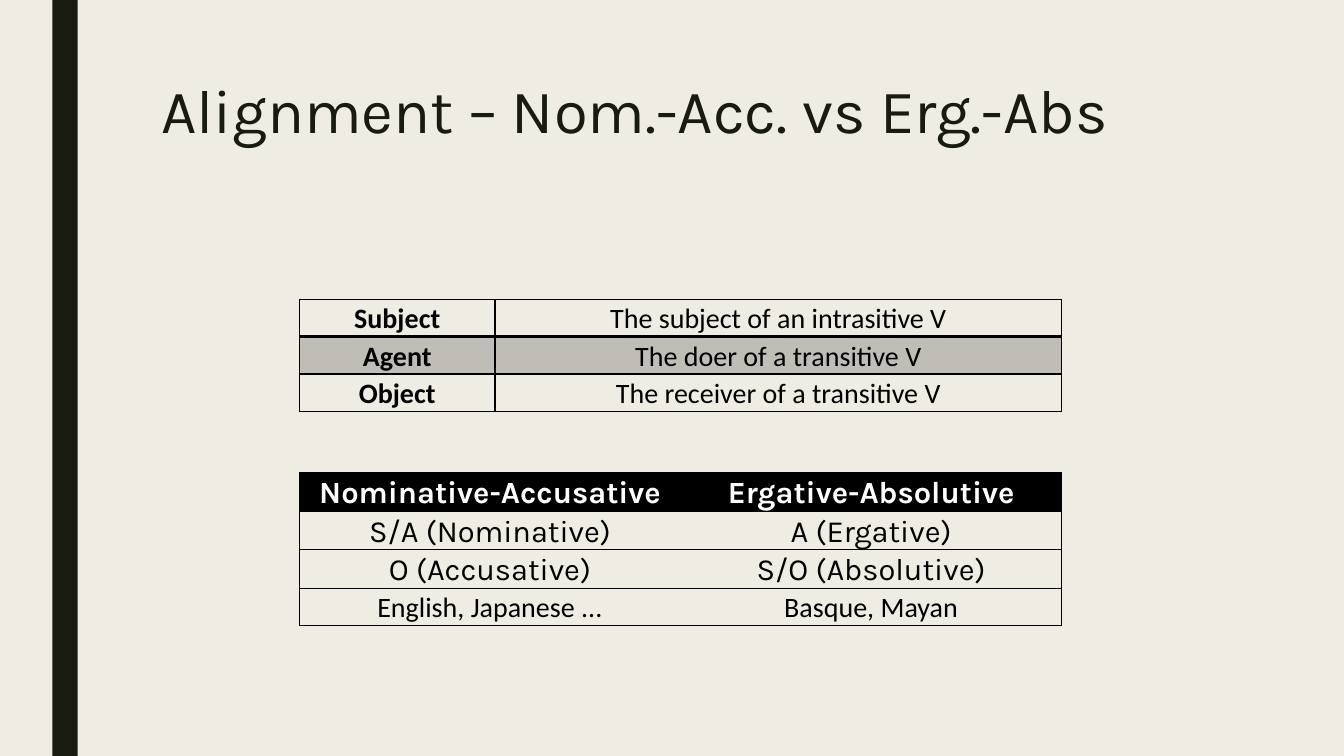
from lxml.etree import SubElement
from pptx import Presentation
from pptx.dml.color import RGBColor
from pptx.enum.shapes import MSO_SHAPE
from pptx.enum.text import MSO_ANCHOR, MSO_AUTO_SIZE, PP_ALIGN
from pptx.oxml.ns import qn
from pptx.util import Inches, Pt

PAPER = "EFEDE3"
INK = "191B0E"
BLACK = "000000"
WHITE = "FFFFFF"

ROLES = [
    ("Subject", "The subject of an intrasitive V"),
    ("Agent", "The doer of a transitive V"),
    ("Object", "The receiver of a transitive V"),
]
ALIGNMENTS = [
    ("Nominative-Accusative", "Ergative-Absolutive"),
    ("S/A (Nominative)", "A (Ergative)"),
    ("O (Accusative)", "S/O (Absolutive)"),
    ("English, Japanese ...", "Basque, Mayan"),
]


def paint(fill, color):
    fill.solid()
    fill.fore_color.rgb = RGBColor.from_string(color)


def style_text(paragraph, font_name, size, color, bold=False, spacing=1.07):
    paragraph.line_spacing = spacing
    for run in paragraph.runs:
        run.font.name = font_name
        run.font.size = Pt(size)
        run.font.bold = bold
        run.font.color.rgb = RGBColor.from_string(color)


def set_borders(cell, widths):
    """Draw left, right, top and bottom lines in points; 0 hides a line."""
    properties = cell._tc.get_or_add_tcPr()
    for side, width in zip("LRTB", widths):
        line = SubElement(properties, qn(f"a:ln{side}"), w=str(Pt(width)))
        if width:
            solid = SubElement(line, qn("a:solidFill"))
            SubElement(solid, qn("a:srgbClr"), val=BLACK)
        else:
            SubElement(line, qn("a:noFill"))


def fill_cell(cell, color, opacity=100):
    if color is None:
        cell.fill.background()
        return
    paint(cell.fill, color)
    if opacity < 100:
        tint = cell._tc.tcPr.find(f"{qn('a:solidFill')}/{qn('a:srgbClr')}")
        SubElement(tint, qn("a:alpha"), val=str(opacity * 1000))


def add_grid(slide, top, column_widths, rows):
    """Place an unstyled table with centred text."""
    row_height = Inches(0.37)
    table = slide.shapes.add_table(
        len(rows), len(column_widths), Inches(2.97), Inches(top),
        Inches(sum(column_widths)), row_height * len(rows)).table
    table.first_row = table.horz_banding = False
    for column, width in zip(table.columns, column_widths):
        column.width = Inches(width)
    for row, texts in zip(table.rows, rows):
        row.height = row_height
        for cell, text in zip(row.cells, texts):
            cell.text_frame.text = text
            cell.text_frame.paragraphs[0].alignment = PP_ALIGN.CENTER
            cell.vertical_anchor = MSO_ANCHOR.MIDDLE
            cell.margin_left = cell.margin_right = Inches(0.14)
            cell.margin_top = cell.margin_bottom = 0
    return table


def add_roles(slide):
    table = add_grid(slide, 2.97, (1.94, 5.62), ROLES)
    for r, row in enumerate(table.rows):
        top, bottom = 2 if r == 1 else 1, 2 if r == 0 else 1
        for c, cell in enumerate(row.cells):
            style_text(cell.text_frame.paragraphs[0], "Calibri", 20, BLACK, bold=c == 0)
            set_borders(cell, (1, 1, top, bottom))
            fill_cell(cell, BLACK if r == 1 else None, opacity=20)


def add_alignments(slide):
    table = add_grid(slide, 4.69, (3.78, 3.78), ALIGNMENTS)
    last = len(ALIGNMENTS) - 1
    for r, row in enumerate(table.rows):
        is_header = r == 0
        font_name, size = ("Calibri", 20) if r == last else ("Karla", 22)
        for c, cell in enumerate(row.cells):
            style_text(cell.text_frame.paragraphs[0], font_name, size,
                       WHITE if is_header else BLACK, bold=is_header)
            set_borders(cell, (0.5 if c == 0 else 0, 0.5 if c == 1 else 0, 0.5, 0.5))
            fill_cell(cell, BLACK if is_header else None)


def add_side_bar(slide, height):
    bar = slide.shapes.add_shape(
        MSO_SHAPE.RECTANGLE, Inches(0.52), 0, Inches(0.25), height)
    bar.shadow.inherit = False
    paint(bar.fill, INK)
    bar.line.fill.background()


def set_title(slide, text):
    title = slide.shapes.title
    title.left, title.top = Inches(1.5), Inches(0.75)
    title.width, title.height = Inches(10.5), Inches(1.62)
    frame = title.text_frame
    frame.text = text
    frame.word_wrap = True
    frame.auto_size = MSO_AUTO_SIZE.NONE
    frame.vertical_anchor = MSO_ANCHOR.TOP
    frame.paragraphs[0].alignment = PP_ALIGN.LEFT
    style_text(frame.paragraphs[0], "Karla", 44, INK, spacing=0.89)


def main():
    deck = Presentation()
    deck.slide_width, deck.slide_height = Inches(13.33), Inches(7.5)
    slide = deck.slides.add_slide(deck.slide_layouts[5])
    paint(slide.background.fill, PAPER)
    add_side_bar(slide, deck.slide_height)
    set_title(slide, "Alignment – Nom.-Acc. vs Erg.-Abs")
    add_alignments(slide)
    add_roles(slide)
    deck.save("out.pptx")


if __name__ == "__main__":
    main()
